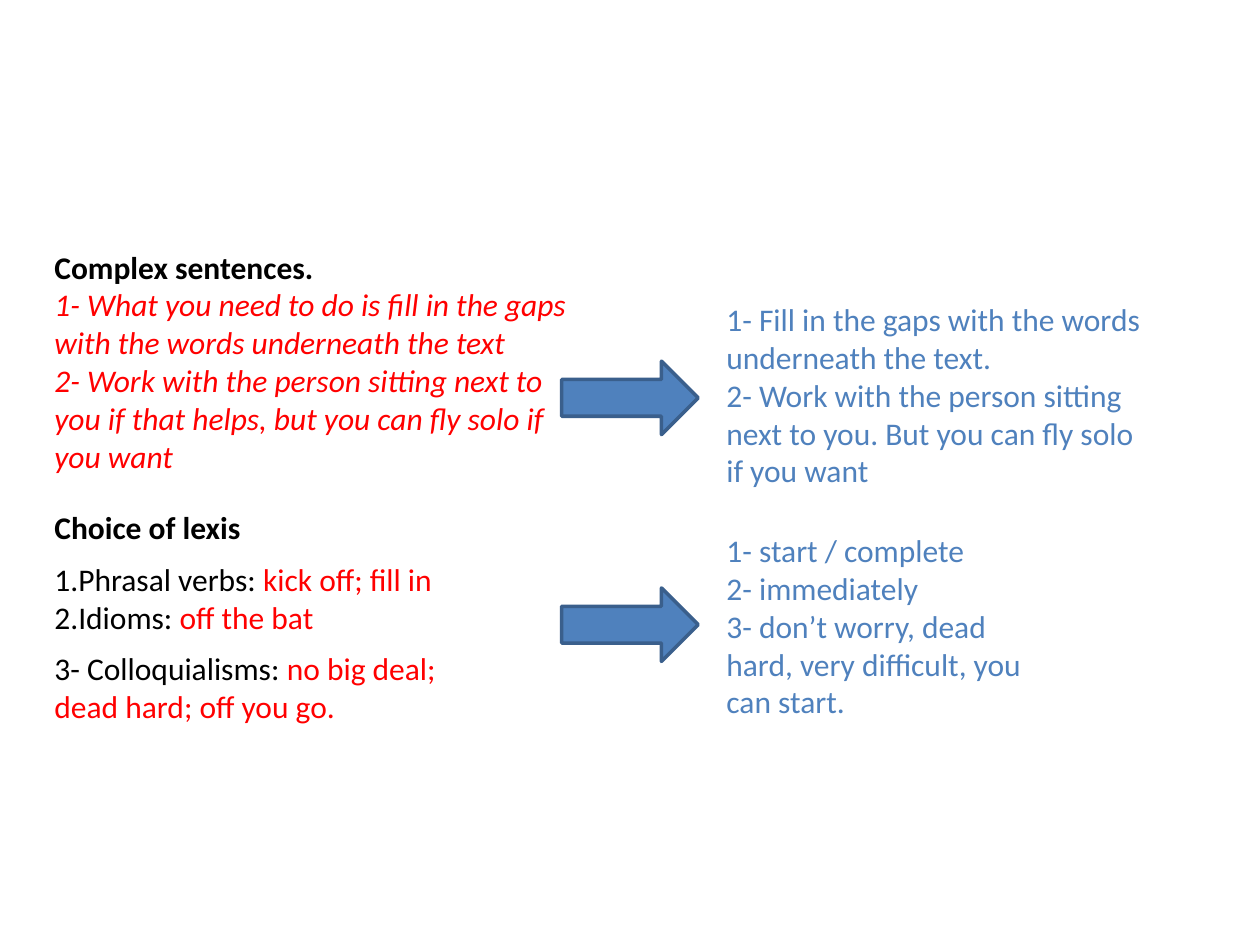
from lxml import etree
from pptx import Presentation
from pptx.dml.color import RGBColor as RGB
from pptx.enum.shapes import MSO_SHAPE as SHAPE
from pptx.enum.text import MSO_AUTO_SIZE as AUTO
from pptx.oxml.ns import qn
from pptx.util import Pt

PX = 7620
FONT = "Calibri"
COLORS = {"ink": "000000", "complex": "FF0000", "simple": "4F81BD", "edge": "3A5F8C"}


def rgb(name):
    return RGB.from_string(COLORS[name])


def add_run(p, text, color="ink", bold=False, italic=False):
    r = p.add_run()
    r.text = text
    r.font.name = FONT
    r.font.size = Pt(18)
    r.font.bold = bold
    r.font.italic = italic
    r.font.color.rgb = rgb(color)


def number(p):
    pPr = p._p.get_or_add_pPr()
    pPr.set("marL", "0")
    pPr.set("indent", "0")
    etree.SubElement(pPr, qn("a:buFont"), typeface="+mj-lt")
    etree.SubElement(pPr, qn("a:buAutoNum"), type="arabicPeriod")


def add_text(s, x, y, w, h, paragraphs):
    tf = s.shapes.add_textbox(x * PX, y * PX, w * PX, h * PX).text_frame
    tf.word_wrap = True
    tf.auto_size = AUTO.SHAPE_TO_FIT_TEXT
    for i, (runs, fmt) in enumerate(paragraphs):
        p = tf.add_paragraph() if i else tf.paragraphs[0]
        if fmt.get("numbered"):
            number(p)
        p.space_after = Pt(fmt.get("after", 0))
        for text, style in runs:
            add_run(p, text, **style)


def para(*runs, **fmt):
    return runs, fmt


def add_arrow(s, x, y):
    sp = s.shapes.add_shape(SHAPE.RIGHT_ARROW, x * PX, y * PX, 130 * PX, 70 * PX)
    sp.shadow.inherit = False
    sp.fill.solid()
    sp.fill.fore_color.rgb = rgb("simple")
    sp.line.color.rgb = rgb("edge")
    sp.line.width = Pt(2)


def add_simple(s, x, y, w, h, lines):
    add_text(s, x, y, w, h, [para((t, {"color": "simple"})) for t in lines])


def sentences(s, x, y):
    style = {"color": "complex", "italic": True}
    add_text(s, x, y, 532, 230, [
        para(("Complex sentences.", {"bold": True})),
        para(("1- What you need to do is fill in the gaps with the words underneath the text", style)),
        para(("2- Work with the person sitting next to you if that helps, "
              "but you can fly solo if you want", style)),
    ])
    add_arrow(s, x + 495, y + 114)
    add_simple(s, x + 640, y + 50, 430, 230, [
        "1- Fill in the gaps with the words underneath the text.",
        "2- Work with the person sitting next to you. But you can fly solo if you want",
    ])


def lexis(s, x, y):
    red = {"color": "complex"}
    add_text(s, x, y, 450, 221, [
        para(("Choice of lexis", {"bold": True}), after=8),
        para(("Phrasal verbs: ", {}), ("kick off; fill in", red), numbered=True),
        para(("Idioms: ", {}), ("off the bat", red), numbered=True, after=8),
        para(("3- Colloquialisms: ", {}), ("no big deal; dead hard; off you go.", red)),
    ])
    add_arrow(s, x + 495, y + 82)
    add_simple(s, x + 640, y + 22, 340, 194, [
        "1- start / complete",
        "2- immediately",
        "3- don’t worry, dead hard, very difficult, you can start.",
    ])


def main():
    prs = Presentation()
    prs.slide_width = 1200 * PX
    prs.slide_height = 900 * PX
    s = prs.slides.add_slide(prs.slide_layouts[6])
    sentences(s, 40, 230)
    lexis(s, 40, 478)
    prs.save("out.pptx")


if __name__ == "__main__":
    main()
